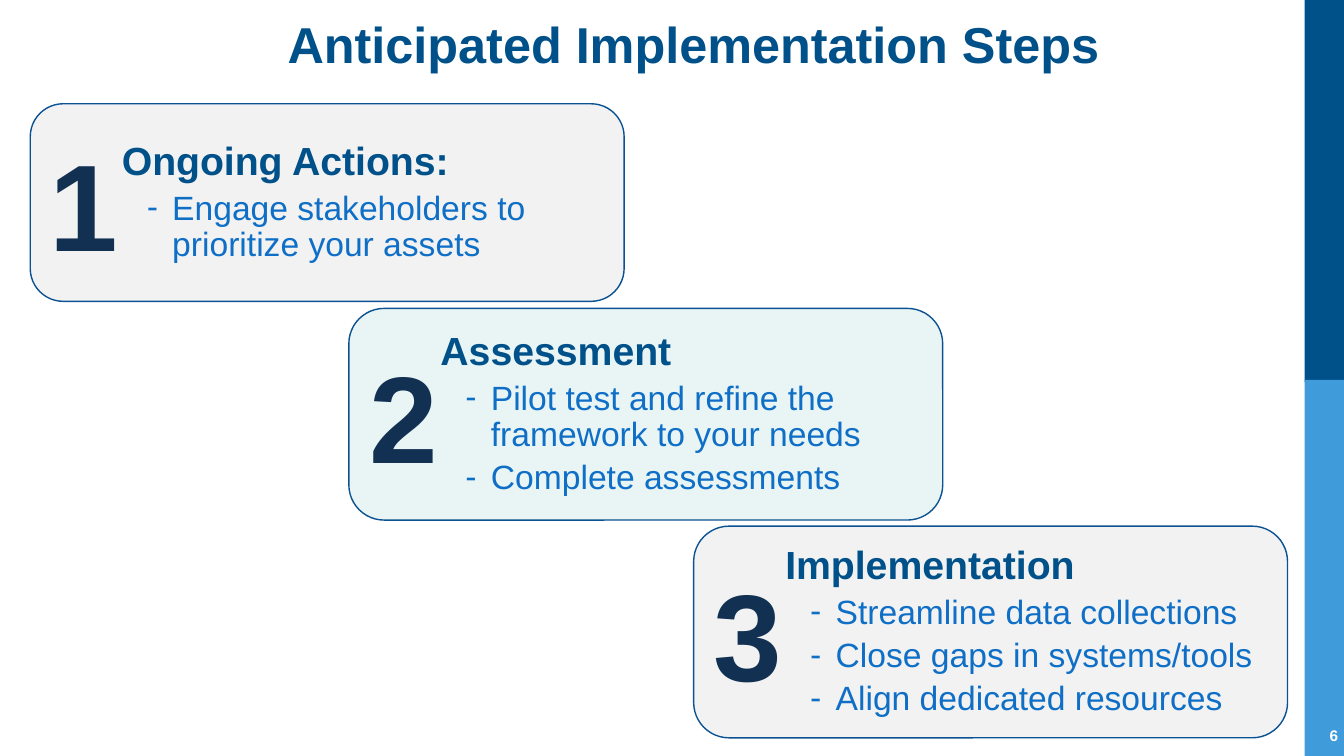
from dataclasses import dataclass

from lxml import etree
from pptx import Presentation
from pptx import util as u
from pptx.dml.color import RGBColor
from pptx.enum import shapes, text
from pptx.oxml import ns

PX = 9144
FONT = "Arial"
WHITE = RGBColor(0xFF, 0xFF, 0xFF)
NAVY = RGBColor(0x00, 0x50, 0x89)
SKY = RGBColor(0x3F, 0x9B, 0xDA)
INK = RGBColor(0x11, 0x30, 0x52)
BLUE = RGBColor(0x0F, 0x6F, 0xC6)
OUTLINE = RGBColor(0x0B, 0x52, 0x92)
GREY = RGBColor(0xF2, 0xF2, 0xF2)
MINT = RGBColor(0xE9, 0xF4, 0xF5)

CARD_WIDTH = 589
DETAIL_WIDTH = 519
HEADING_MARGIN = 25
ACTION_MARGIN = 75
ACTION_INDENT = -25


@dataclass(frozen=True)
class Style:
    size: int
    color: RGBColor
    bold: bool = True


@dataclass(frozen=True)
class Box:
    left: int
    top: int
    width: int
    height: int

    def emu(self) -> list[int]:
        return [n * PX for n in (self.left, self.top, self.width, self.height)]


@dataclass(frozen=True)
class Band:
    box: Box
    color: RGBColor


@dataclass(frozen=True)
class Step:
    left: int
    top: int
    height: int
    detail_offset: int
    fill: RGBColor
    heading: str
    actions: tuple[str, ...]


TITLE = Style(36, NAVY)
PAGE = Style(11, WHITE)
NUMERAL = Style(88, INK)
HEADING = Style(28, NAVY)
ACTION = Style(24, BLUE, False)

BANDS = (
    Band(Box(1294, 0, 39, 379), NAVY),
    Band(Box(1294, 377, 39, 373), SKY),
)
STEPS = (
    Step(30, 103, 196, 56, GREY, "Ongoing Actions:",
         ("Engage stakeholders to prioritize your assets",)),
    Step(346, 306, 210, 56, MINT, "Assessment",
         ("Pilot test and refine the framework to your needs",
          "Complete assessments")),
    Step(688, 522, 210, 56, GREY, "Implementation",
         ("Streamline data collections",
          "Close gaps in systems/tools",
          "Align dedicated resources")),
)


def write(paragraph, words: str, style: Style, **layout) -> None:
    for name, value in layout.items():
        setattr(paragraph, name, value)
    run = paragraph.add_run()
    run.text = words
    values = {"name": FONT, "size": u.Pt(style.size), "bold": style.bold}
    for name, value in values.items():
        setattr(run.font, name, value)
    run.font.color.rgb = style.color


def indent(paragraph, margin: int, first: int = 0, bullet: str = "") -> None:
    properties = paragraph._p.get_or_add_pPr()
    properties.set("marL", str(margin * PX))
    properties.set("indent", str(first * PX))
    if bullet:
        etree.SubElement(properties, ns.qn("a:buFont")).set("typeface", FONT)
        etree.SubElement(properties, ns.qn("a:buChar")).set("char", bullet)


def add_filled(slide, kind, box: Box, color: RGBColor):
    shape = slide.shapes.add_shape(kind, *box.emu())
    shape.shadow.inherit = False
    shape.fill.solid()
    shape.fill.fore_color.rgb = color
    shape.line.fill.background()
    return shape


def add_frame(slide, box: Box, anchor):
    frame = slide.shapes.add_textbox(*box.emu()).text_frame
    frame.word_wrap = True
    frame.vertical_anchor = anchor
    return frame


def add_step(slide, number: int, step: Step) -> None:
    card = add_filled(slide, shapes.MSO_SHAPE.ROUNDED_RECTANGLE,
                      Box(step.left, step.top, CARD_WIDTH, step.height), step.fill)
    card.line.color.rgb = OUTLINE
    card.line.width = u.Pt(1)
    card.text_frame.vertical_anchor = text.MSO_ANCHOR.MIDDLE
    write(card.text_frame.paragraphs[0], str(number), NUMERAL,
          alignment=text.PP_ALIGN.LEFT)

    detail = add_frame(slide, Box(step.left + step.detail_offset, step.top,
                                  DETAIL_WIDTH, step.height), text.MSO_ANCHOR.MIDDLE)
    heading = detail.paragraphs[0]
    indent(heading, HEADING_MARGIN)
    write(heading, step.heading, HEADING, line_spacing=0.9)
    for words in step.actions:
        action = detail.add_paragraph()
        indent(action, ACTION_MARGIN, ACTION_INDENT, "⁃")
        write(action, words, ACTION, level=1, line_spacing=0.9, space_before=u.Pt(5))


def main() -> None:
    deck = Presentation()
    deck.slide_width, deck.slide_height = 1333 * PX, 750 * PX
    slide = deck.slides.add_slide(deck.slide_layouts[6])
    for band in BANDS:
        add_filled(slide, shapes.MSO_SHAPE.RECTANGLE, band.box, band.color)
    title = add_frame(slide, Box(99, 15, 1178, 110), text.MSO_ANCHOR.TOP)
    write(title.paragraphs[0], "Anticipated Implementation Steps", TITLE,
          alignment=text.PP_ALIGN.CENTER, line_spacing=0.9)
    page = add_frame(slide, Box(1225, 710, 112, 40), text.MSO_ANCHOR.MIDDLE)
    write(page.paragraphs[0], "6", PAGE, alignment=text.PP_ALIGN.RIGHT)
    for number, step in enumerate(STEPS, 1):
        add_step(slide, number, step)
    deck.save("out.pptx")


if __name__ == "__main__":
    main()
